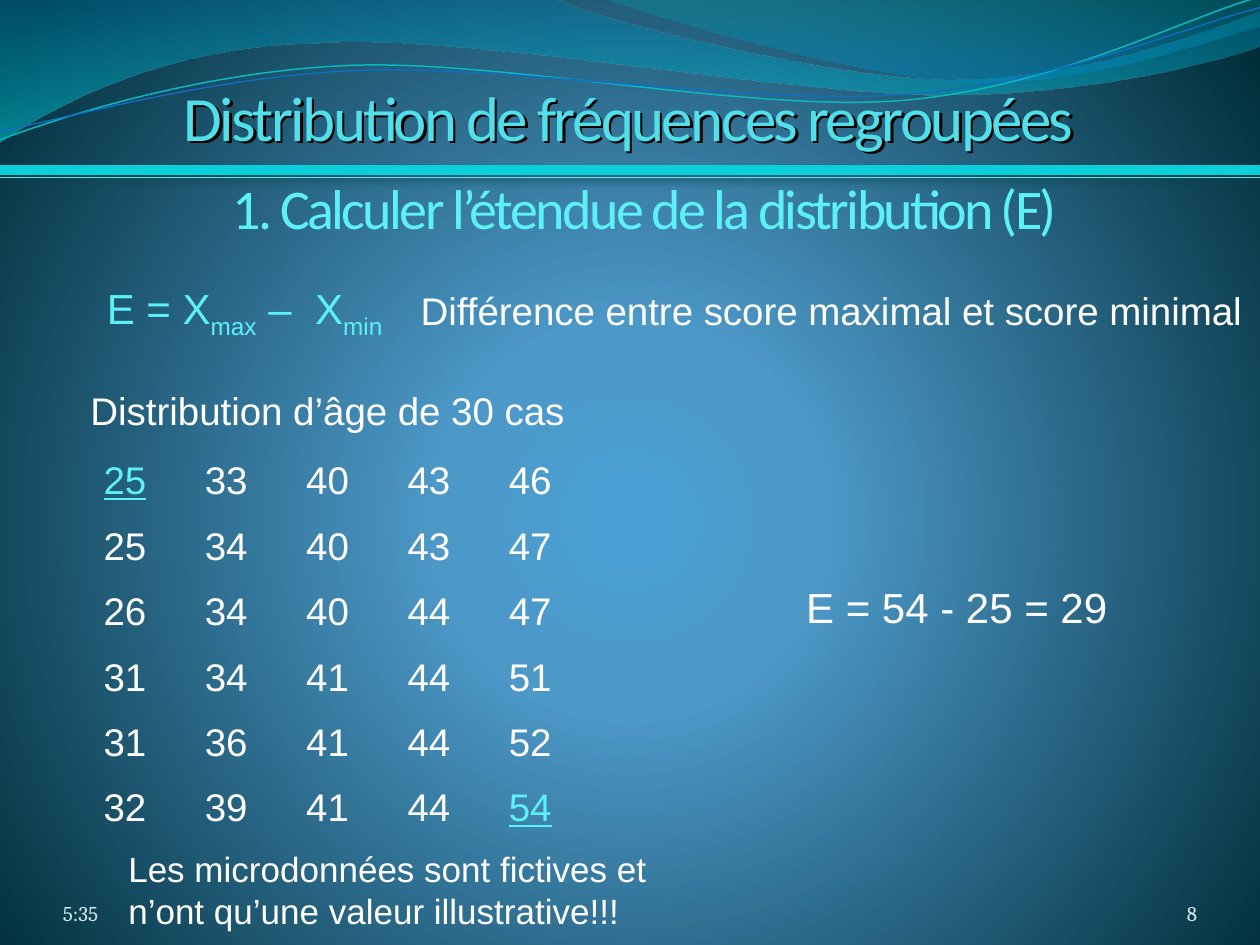
from lxml import etree
from pptx import Presentation
from pptx.dml.color import RGBColor
from pptx.enum.shapes import MSO_CONNECTOR
from pptx.enum.text import MSO_ANCHOR as Anchor, PP_ALIGN as Align
from pptx.oxml import parse_xml
from pptx.oxml.ns import nsdecls, qn
from pptx.util import Inches, Pt

WHITE, CYAN, PALE = "FFFFFF", "5EF0F7", "D1EAEE"
NO_STYLE = "{2D5ABB26-0587-4C30-8999-92F81FD0307C}"
AGES = [
    [25, 33, 40, 43, 46],
    [25, 34, 40, 43, 47],
    [26, 34, 40, 44, 47],
    [31, 34, 41, 44, 51],
    [31, 36, 41, 44, 52],
    [32, 39, 41, 44, 54],
]
UPPER_WAVE = [
    (0, 0), (4.4, -0.01),
    (4.76, 0.17, 6.64, 0.63, 7.58, 0.63), (8.53, 0.63, 9.58, 0.26, 10, 0.09),
    (10.01, 0.36),
    (9.83, 0.44, 8.7, 0.76, 7.46, 0.75), (6.22, 0.75, 3.82, 0.28, 2.57, 0.34),
    (1.29, 0.36, 0.46, 0.83, -0.01, 1.13), (0, 0),
]
RIGHT_WAVE = [
    (4.79, -0.01),
    (5.09, 0.11, 6.82, 0.62, 7.69, 0.65), (8.56, 0.69, 9.61, 0.32, 10, 0.21),
    (10, 0), (4.79, -0.01),
]
TEAL_CURVE = [
    (0, 1.11),
    (0.48, 0.93, 1.58, 0.57, 2.77, 0.52), (3.95, 0.47, 5.93, 0.89, 7.13, 0.8),
    (8.33, 0.71, 9.38, 0.15, 9.98, -0.02),
]
BLUE_CURVE = [
    (0, 1.04),
    (0.47, 0.96, 1.64, 0.61, 2.83, 0.56), (4.03, 0.51, 5.97, 0.84, 7.17, 0.75),
    (8.36, 0.67, 9.41, 0.21, 10, 0.06),
]


def color(value):
    """Turn a hex string into a colour."""
    return RGBColor.from_string(value)


def gradient(stops, direction):
    """Return a gradient fill from (position, colour, opacity) stops."""
    marks = ""
    for position, value, opacity in stops:
        alpha = f'<a:alpha val="{opacity * 1000}"/>' if opacity < 100 else ""
        marks += (f'<a:gs pos="{position * 1000}"><a:srgbClr val="{value}">'
                  f'{alpha}</a:srgbClr></a:gs>')
    return parse_xml(f'<a:gradFill {nsdecls("a")} rotWithShape="1">'
                     f'<a:gsLst>{marks}</a:gsLst>{direction}</a:gradFill>')


def shadow_effect(value, opacity, blur, distance, angle):
    """Return an effect list with one outer shadow."""
    return parse_xml(
        f'<a:effectLst {nsdecls("a")}><a:outerShdw blurRad="{Pt(blur)}" '
        f'dist="{Pt(distance)}" dir="{angle * 60000}" algn="ctr" rotWithShape="0">'
        f'<a:srgbClr val="{value}"><a:alpha val="{opacity * 1000}"/></a:srgbClr>'
        '</a:outerShdw></a:effectLst>')


def add_outline(slide, left, top, segments, close):
    """Draw an outline of lines and cubic curves relative to a corner."""
    points = [(Inches(left + x), Inches(top + y)) for *_, x, y in segments]
    builder = slide.shapes.build_freeform(*points[0])
    builder.add_line_segments(points[1:], close=close)
    shape = builder.convert_to_shape()
    shape.shadow.inherit = False
    steps = list(shape._element.iter(qn("a:lnTo")))
    for step, segment in zip(steps, segments[1:]):
        if len(segment) == 2:
            continue
        curve = etree.Element(qn("a:cubicBezTo"))
        for x, y in zip(segment[::2], segment[1::2]):
            etree.SubElement(curve, qn("a:pt"), x=str(Inches(left + x) - shape.left),
                             y=str(Inches(top + y) - shape.top))
        step.getparent().replace(step, curve)
    return shape


def add_waves(slide, left, top):
    """Draw the wave banner."""
    for segments, stops in (
            (UPPER_WAVE, [(0, "0074A1", 45), (100, "00C6CF", 55)]),
            (RIGHT_WAVE, [(0, "00A1A9", 30), (80, "008BBF", 45)])):
        shape = add_outline(slide, left, top, segments, True)
        shape.line.fill.background()
        shape.fill.background()
        properties = shape._element.spPr
        properties.replace(properties.find(qn("a:noFill")),
                           gradient(stops, '<a:lin ang="5400000" scaled="1"/>'))
    for segments, value, width in ((TEAL_CURVE, "0AB8BF", 0.85), (BLUE_CURVE, "0F6FC6", 0.75)):
        shape = add_outline(slide, left, top, segments, False)
        shape.fill.background()
        shape.line.color.rgb = color(value)
        shape.line.width = Pt(width)


def add_rule(slide, left, top, width, value, weight, glow):
    """Draw a horizontal rule with a soft shadow below it."""
    line = slide.shapes.add_connector(MSO_CONNECTOR.STRAIGHT, Inches(left), Inches(top),
                                      Inches(left + width), Inches(top))
    line.line.color.rgb = color(value)
    line.line.width = Pt(weight)
    line._element.spPr.append(shadow_effect(glow, 48, 4.5, 3, 90))


def style(paragraph, size, value, font="Arial", align=Align.LEFT):
    """Set the font and alignment of a paragraph."""
    paragraph.alignment = align
    paragraph.font.size = Pt(size)
    paragraph.font.name = font
    paragraph.font.color.rgb = color(value)


def add_text(slide, box, text, size, value, font="Arial", align=Align.LEFT,
             anchor=Anchor.TOP, inset=(0.1, 0.05)):
    """Add a wrapped text box with one paragraph."""
    shape = slide.shapes.add_textbox(*map(Inches, box))
    frame = shape.text_frame
    frame.word_wrap = True
    frame.vertical_anchor = anchor
    frame.margin_left = frame.margin_right = Inches(inset[0])
    frame.margin_top = frame.margin_bottom = Inches(inset[1])
    paragraph = frame.paragraphs[0]
    paragraph.add_run().text = text
    style(paragraph, size, value, font, align)
    return shape


def tighten(paragraph):
    """Narrow the letter spacing of a paragraph."""
    for run in paragraph.runs:
        run._r.get_or_add_rPr().set("spc", "-150")


def indent(paragraph, distance):
    """Set the left indent of a paragraph."""
    paragraph._p.get_or_add_pPr().set("marL", str(Inches(distance)))


def add_title(slide, box):
    """Add the shadowed slide title."""
    shape = add_text(slide, box, "Distribution de fréquences regroupées", 36, "51E0EA",
                     "Calibri", Align.CENTER, Anchor.BOTTOM, (0, 0))
    tighten(shape.text_frame.paragraphs[0])
    shape._element.spPr.append(shadow_effect("000000", 100, 0, 2, 45))


def add_body(slide, box):
    """Add the step heading, the range formula and its result."""
    frame = add_text(slide, box, "1. Calculer l’étendue de la distribution (E)",
                     32, CYAN, "Calibri").text_frame
    heading, formula, result = frame.paragraphs[0], frame.add_paragraph(), frame.add_paragraph()
    tighten(heading)
    indent(heading, 1)
    for text, lowered in (("E = X", False), ("max", True), (" –  X", False), ("min", True)):
        run = formula.add_run()
        run.text = text
        if lowered:
            run._r.get_or_add_rPr().set("baseline", "-25000")
    style(formula, 24, CYAN)
    result.add_run().text = "E = 54 - 25 = 29"
    style(result, 24, WHITE)
    indent(result, 5.55)
    for paragraph, before in ((heading, 12), (formula, 12), (result, 126)):
        paragraph.space_before = Pt(before)
        paragraph.space_after = Pt(12)


def add_ages(slide, box):
    """Add the age table with its extremes highlighted."""
    last = len(AGES[0]) - 1
    table = slide.shapes.add_table(len(AGES) + 1, last + 1, *map(Inches, box)).table
    table.first_row = table.horz_banding = False
    table._tbl.tblPr.find(qn("a:tableStyleId")).text = NO_STYLE
    for index, row in enumerate(table.rows):
        row.height = Inches(0.55 if index < 2 else 0.52)
    table.cell(0, 0).merge(table.cell(0, last))
    rows = [["Distribution d’âge de 30 cas"] + [""] * last] + AGES
    for i, row in enumerate(rows):
        for j, content in enumerate(row):
            cell = table.cell(i, j)
            cell.fill.background()
            cell.vertical_anchor = Anchor.BOTTOM
            cell.margin_left = cell.margin_right = cell.margin_top = cell.margin_bottom = 0
            cell.text = str(content)
            marked = (i, j) in ((1, 0), (len(AGES), last))
            paragraph = cell.text_frame.paragraphs[0]
            style(paragraph, 22, CYAN if marked else WHITE, align=Align.CENTER)
            if marked:
                paragraph.font.underline = True


def add_background(slide):
    """Fill the background with a radial gradient."""
    slide.background.fill.solid()
    properties = slide._element.find(".//" + qn("p:bgPr"))
    stops = [(0, "4AA0D6", 100), (25, "4C98C7", 100), (100, "002C38", 100)]
    focus = ('<a:path path="circle"><a:fillToRect l="10000" t="110000" '
             'r="10000" b="100000"/></a:path>')
    properties.replace(properties.find(qn("a:solidFill")), gradient(stops, focus))


def main():
    """Build and save the slide."""
    presentation = Presentation()
    presentation.slide_width, presentation.slide_height = Inches(10), Inches(7.5)
    slide = presentation.slides.add_slide(presentation.slide_layouts[6])
    add_background(slide)
    add_waves(slide, 0, 0)
    add_body(slide, (0.75, 1.33, 8.86, 5.78))
    for box, text, align in (((8.67, 6.95, 0.83, 0.4), "8", Align.RIGHT),
                             ((0.5, 6.95, 2.33, 0.4), "5:35", Align.LEFT)):
        add_text(slide, box, text, 12, PALE, "Cambria", align, Anchor.BOTTOM, (0, 0))
    add_title(slide, (0, 0.44, 9.98, 0.78))
    add_ages(slide, (0.59, 2.89, 4.02, 3.71))
    add_rule(slide, 0, 1.35, 10, "0BD0D9", 6, "024B4E")
    add_rule(slide, 0, 1.41, 10, "77D9E8", 0.75, WHITE)
    add_text(slide, (0.92, 6.68, 4.83, 0.77),
             "Les microdonnées sont fictives et n’ont qu’une valeur illustrative!!!", 20, WHITE)
    add_text(slide, (3.24, 2.23, 8.11, 0.47),
             "Différence entre score maximal et score minimal", 22, WHITE)
    presentation.save("out.pptx")


if __name__ == "__main__":
    main()
